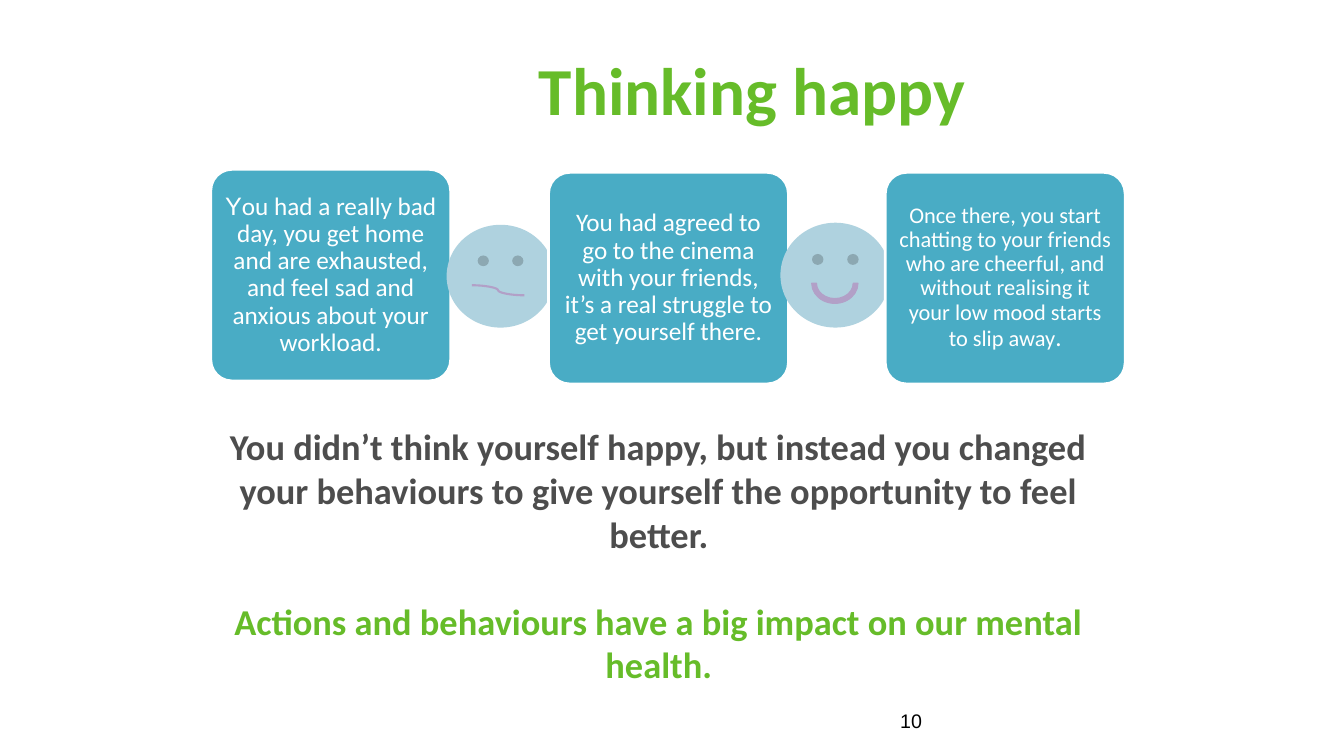
"""Build the "Thinking happy" slide: three story cards joined by faces."""
import pptx
import pptx.util
from pptx.dml.color import RGBColor
from pptx.enum.shapes import MSO_CONNECTOR, MSO_SHAPE
from pptx.enum.text import MSO_ANCHOR, PP_ALIGN
from pptx.oxml.ns import qn
from lxml import etree

PX = 9144
GREEN = RGBColor(0x66, 0xBC, 0x29)
GREY = RGBColor(0x4D, 0x4D, 0x4D)
TEAL = RGBColor(0x49, 0xAC, 0xC5)
PALE_BLUE = RGBColor(0xAF, 0xD2, 0xDF)
LILAC = RGBColor(0xB2, 0xA0, 0xC7)
WHITE = RGBColor(0xFF, 0xFF, 0xFF)
BLACK = RGBColor(0x00, 0x00, 0x00)


def write(shape, paragraphs, anchor, align, inset_x, inset_y):
    """Fill a shape with paragraphs of (text, font, size, colour, bold) runs."""
    frame = shape.text_frame
    frame.word_wrap = True
    frame.vertical_anchor = anchor
    frame.margin_left = frame.margin_right = inset_x * PX
    frame.margin_top = frame.margin_bottom = inset_y * PX
    for index, runs in enumerate(paragraphs):
        paragraph = frame.add_paragraph() if index else frame.paragraphs[0]
        paragraph.alignment = align
        for text, font, size, colour, bold in runs:
            run = paragraph.add_run()
            run.text = text
            run.font.name = font
            run.font.size = pptx.util.Pt(size)
            run.font.color.rgb = colour
            run.font.bold = bold
    return frame


def add_shape(kind, box, fill):
    """Add a filled preset shape without shadow or outline."""
    shape = slide.shapes.add_shape(kind, *[length * PX for length in box])
    shape.shadow.inherit = False
    shape.fill.solid()
    shape.fill.fore_color.rgb = fill
    shape.line.fill.background()
    return shape


presentation = pptx.Presentation()
presentation.slide_width = 1333 * PX
presentation.slide_height = 750 * PX
slide = presentation.slides.add_slide(presentation.slide_layouts[6])

title = slide.shapes.add_textbox(375 * PX, 25 * PX, 742 * PX, 125 * PX)
write(title, [[("Thinking happy", "Calibri", 48, GREEN, True)]],
      MSO_ANCHOR.MIDDLE, PP_ALIGN.CENTER, 10, 10)

message = slide.shapes.add_textbox(198 * PX, 411 * PX, 911 * PX, 274 * PX)
message_frame = write(message, [
    [("You didn’t think yourself happy, but instead you changed your behaviours "
      "to give yourself the opportunity to feel better.", "Calibri", 26, GREY, True)],
    [("Actions and behaviours have a big impact on our mental health.",
      "Calibri", 26, GREEN, True)],
], MSO_ANCHOR.TOP, PP_ALIGN.CENTER, 10, 10)
message_frame.paragraphs[1].space_before = pptx.util.Pt(31)

page_number = slide.shapes.add_textbox(883 * PX, 695 * PX, 233 * PX, 40 * PX)
write(page_number, [[("10", "Arial", 14, BLACK, False)]],
      MSO_ANCHOR.MIDDLE, PP_ALIGN.LEFT, 10, 5)

cards = [
    (209, 168, [
        ("Y", "Arial", 18, WHITE, False),
        ("ou had a really bad day, you get home and are exhausted, and feel sad "
         "and anxious about your workload.", "Calibri", 18, WHITE, False)],
     (443, 223, 107, 102)),
    (544, 171, [
        ("You had agreed to go to the cinema with your friends, it’s a real "
         "struggle to get yourself there.", "Calibri", 18, WHITE, False)],
     (774, 221, 109, 104)),
    (878, 171, [
        ("Once there, you start chatting to your friends who are cheerful, and "
         "without realising it your low mood starts to slip away",
         "Calibri", 16, WHITE, False),
        (".", "Calibri", 18, WHITE, False)],
     None),
]
for left, top, runs, face_box in cards:
    card = add_shape(MSO_SHAPE.ROUNDED_RECTANGLE, (left, top, 238, 210), TEAL)
    card.adjustments[0] = 0.1
    card.line.color.rgb = WHITE
    card.line.width = pptx.util.Pt(2)
    card_frame = write(card, [runs], MSO_ANCHOR.MIDDLE, PP_ALIGN.CENTER, 7, 7)
    card_frame.paragraphs[0].line_spacing = 0.9
    if face_box:
        face = add_shape(MSO_SHAPE.SMILEY_FACE, face_box, PALE_BLUE)

wavy_mouth = slide.shapes.add_connector(
    MSO_CONNECTOR.CURVE, 468 * PX, 283 * PX, 520 * PX, 293 * PX)
wavy_mouth.line.color.rgb = LILAC
wavy_mouth.line.width = pptx.util.Pt(1.5)
etree.SubElement(wavy_mouth._element.spPr, qn("a:effectLst"))

smile = add_shape(MSO_SHAPE.BLOCK_ARC, (805, 261, 46, 40), LILAC)
smile.adjustments[2] = 0.12
smile.rotation = 180
smile.line.color.rgb = LILAC
smile.line.width = pptx.util.Pt(0.75)

presentation.save("out.pptx")
